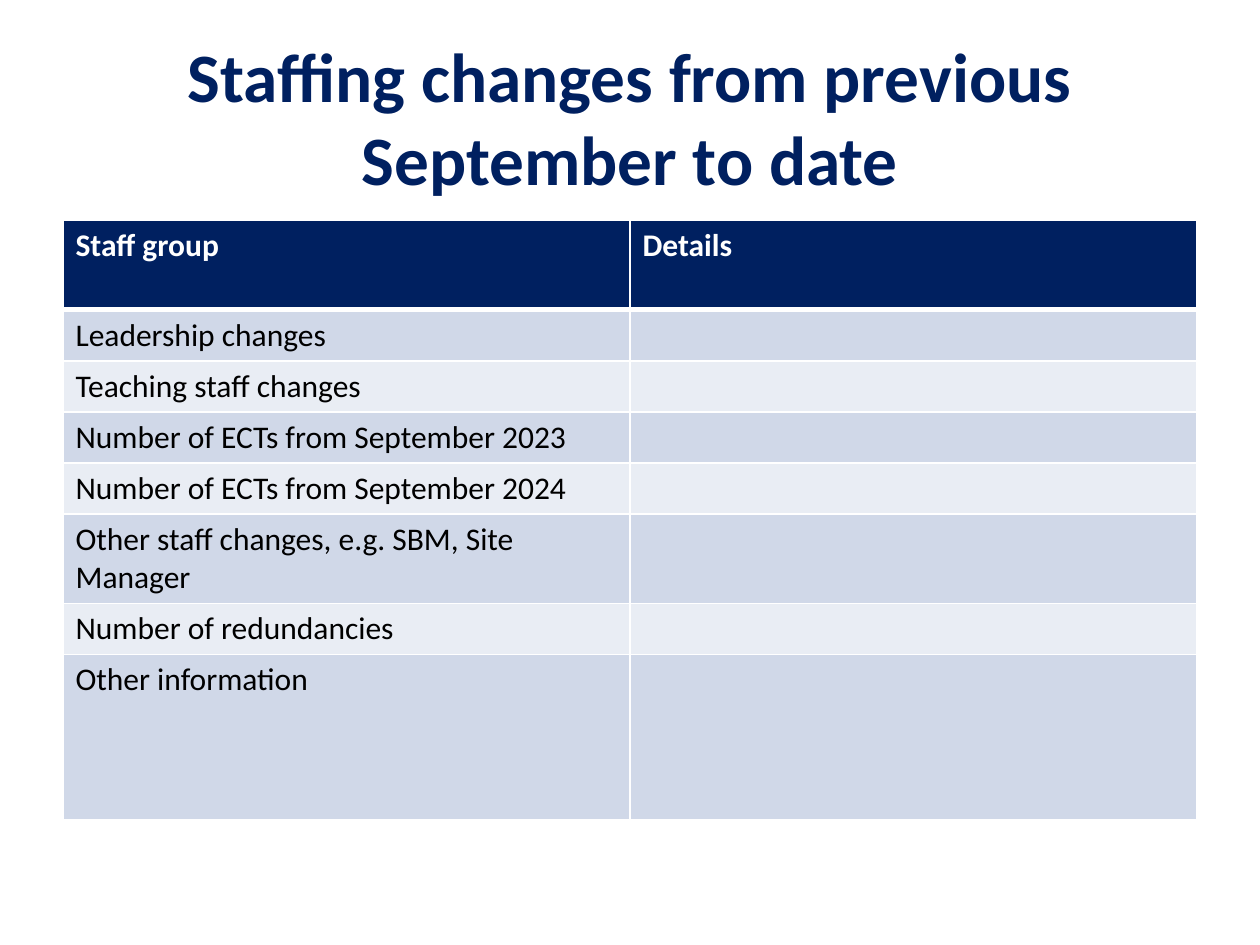
import pptx
import pptx.dml.color
import pptx.enum.text
import pptx.oxml
import pptx.oxml.ns
import pptx.util

Pt = pptx.util.Pt
FONT = "Calibri"
NAVY, WHITE, BLACK = "002060", "FFFFFF", "000000"
BANDS = ("D0D8E8", "E9EDF4")
LINE_HEIGHT, TALL_HEIGHT, NOTES_HEIGHT = 29.2, 51, 94.5
STAFF_ROWS = [
    ("Staff group", "Details", TALL_HEIGHT),
    ("Leadership changes", "", LINE_HEIGHT),
    ("Teaching staff changes", "", LINE_HEIGHT),
    ("Number of ECTs from September 2023", "", LINE_HEIGHT),
    ("Number of ECTs from September 2024", "", LINE_HEIGHT),
    ("Other staff changes, e.g. SBM, Site Manager", "", TALL_HEIGHT),
    ("Number of redundancies", "", LINE_HEIGHT),
    ("Other information", "", NOTES_HEIGHT),
]


def rgb(hex_colour):
    return pptx.dml.color.RGBColor.from_string(hex_colour)


def style_text(paragraph, size, colour, bold):
    for run in paragraph.runs:
        run.font.name = FONT
        run.font.size = Pt(size)
        run.font.bold = bold
        run.font.color.rgb = rgb(colour)


def add_title(slide, text):
    title = slide.shapes.add_textbox(Pt(36), Pt(21.6), Pt(648), Pt(90))
    frame = title.text_frame
    frame.word_wrap = True
    frame.vertical_anchor = pptx.enum.text.MSO_ANCHOR.MIDDLE
    frame.text = text
    frame.paragraphs[0].alignment = pptx.enum.text.PP_ALIGN.CENTER
    style_text(frame.paragraphs[0], 39.6, NAVY, True)


def set_borders(cell, top, bottom):
    """Draw white cell borders; top and bottom are widths in points."""
    properties = cell._tc.get_or_add_tcPr()
    widths = {"lnL": 1, "lnR": 1, "lnT": top, "lnB": bottom}
    for position, (side, width) in enumerate(widths.items()):
        border = pptx.oxml.parse_xml(
            f'<a:{side} {pptx.oxml.ns.nsdecls("a")} w="{Pt(width)}">'
            f'<a:solidFill><a:srgbClr val="{WHITE}"/></a:solidFill></a:{side}>'
        )
        properties.insert(position, border)


def fill_cell(cell, text, row_number):
    is_header = row_number == 0
    cell.text = text
    style_text(cell.text_frame.paragraphs[0], 18,
               WHITE if is_header else BLACK, is_header)
    cell.fill.solid()
    cell.fill.fore_color.rgb = rgb(NAVY if is_header else BANDS[(row_number - 1) % 2])
    set_borders(cell, top=3 if row_number == 1 else 1, bottom=3 if is_header else 1)


def add_staff_table(slide):
    total_height = sum(height for *_, height in STAFF_ROWS)
    table = slide.shapes.add_table(
        len(STAFF_ROWS), 2, Pt(36), Pt(126), Pt(648), Pt(total_height)
    ).table
    for row_number, (group, details, height) in enumerate(STAFF_ROWS):
        table.rows[row_number].height = Pt(height)
        for column, text in enumerate((group, details)):
            fill_cell(table.cell(row_number, column), text, row_number)


def main():
    presentation = pptx.Presentation()
    presentation.slide_width, presentation.slide_height = Pt(720), Pt(540)
    slide = presentation.slides.add_slide(presentation.slide_layouts[6])
    add_title(slide, "Staffing changes from previous September to date")
    add_staff_table(slide)
    presentation.save("out.pptx")


if __name__ == "__main__":
    main()
